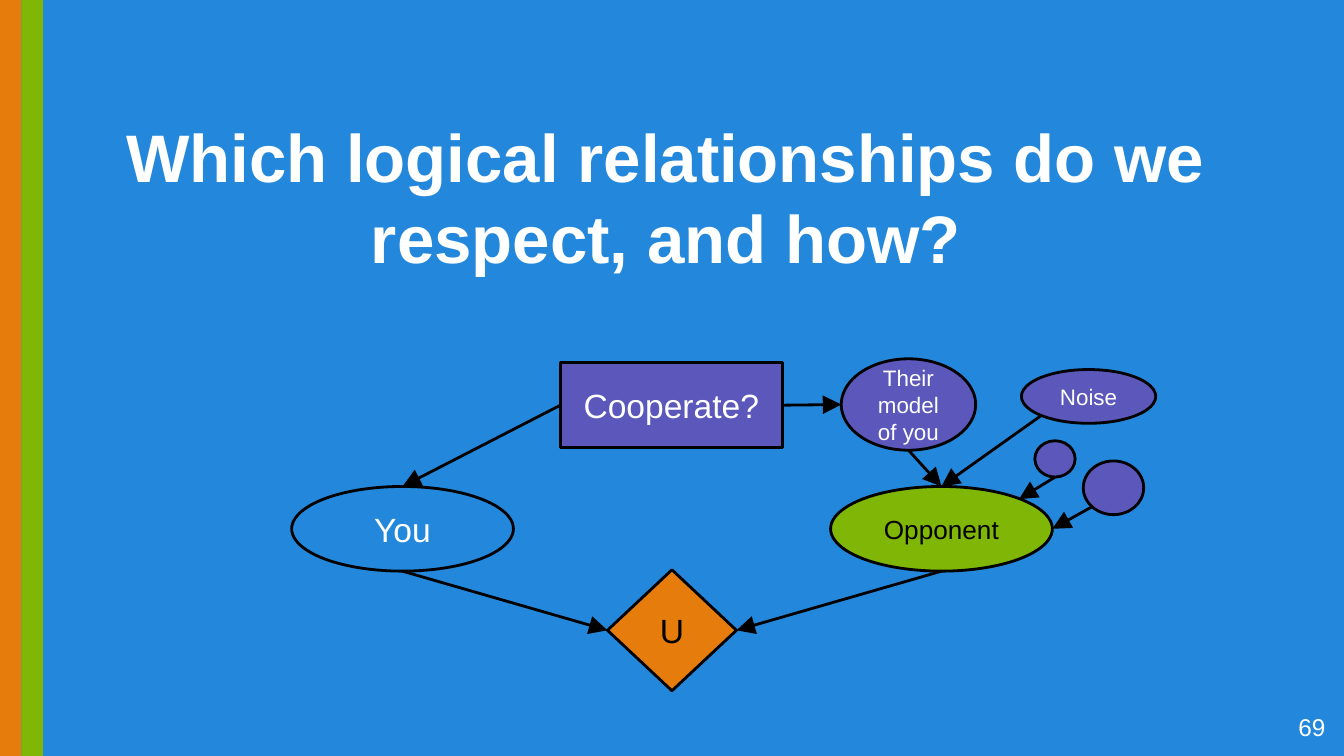
"""Build a slide with a decision diagram of logical relationships."""
from pptx import Presentation
from pptx.dml.color import RGBColor
from pptx.enum.shapes import MSO_CONNECTOR as Link, MSO_SHAPE as Kind
from pptx.enum.text import MSO_ANCHOR as Anchor, MSO_AUTO_SIZE as Fit, PP_ALIGN as Align
from pptx.oxml.ns import qn
from pptx.util import Inches, Pt

BLUE = RGBColor(0x23, 0x88, 0xDB)
GREEN = RGBColor(0x80, 0xB6, 0x06)
ORANGE = RGBColor(0xE6, 0x7C, 0x0B)
PURPLE = RGBColor(0x5B, 0x57, 0xBB)
WHITE = RGBColor(0xFF, 0xFF, 0xFF)
BLACK = RGBColor(0, 0, 0)

WIDE, BAR = 10, 0.16
HIGH = WIDE * 9 / 16
TITLE = "Which logical relationships do we respect, and how?"
NUMBER = "69"
BARS = [ORANGE, GREEN]

NODES = {
    "opponent": (Kind.OVAL, (6.18, 3.62, 1.65, 0.63), GREEN, "Opponent", 14, BLACK),
    "utility": (Kind.DIAMOND, (4.52, 4.24, 0.96, 0.9), ORANGE, "U", 18, BLACK),
    "choice": (Kind.RECTANGLE, (4.17, 2.7, 1.65, 0.63), PURPLE, "Cooperate?", 18, WHITE),
    "you": (Kind.OVAL, (2.17, 3.62, 1.65, 0.63), BLUE, "You", 18, WHITE),
    "model": (Kind.OVAL, (6.26, 2.67, 1, 0.68), PURPLE, "Their model of you", 12, WHITE),
    "noise": (Kind.OVAL, (7.6, 2.75, 1, 0.4), PURPLE, "Noise", 12, WHITE),
    "small": (Kind.OVAL, (7.7, 3.28, 0.3, 0.27), PURPLE, "", 12, WHITE),
    "large": (Kind.OVAL, (8.06, 3.43, 0.45, 0.4), PURPLE, "", 12, WHITE),
}

SIDES = {
    "top": (0.5, 0), "bottom": (0.5, 1), "left": (0, 0.5), "right": (1, 0.5),
    "lower left": (0.15, 0.85), "upper right": (0.85, 0.15),
}

ARROWS = [
    ("you", "bottom", "utility", "left"),
    ("opponent", "bottom", "utility", "right"),
    ("choice", "left", "you", "top"),
    ("choice", "right", "model", "left"),
    ("model", "bottom", "opponent", "top"),
    ("small", "bottom", "opponent", "upper right"),
    ("noise", "lower left", "opponent", "top"),
    ("large", "lower left", "opponent", "right"),
]


def write(shape, text, size, color, align=Align.CENTER, anchor=Anchor.MIDDLE):
    frame = shape.text_frame
    frame.text = text
    frame.word_wrap = True
    frame.auto_size = Fit.NONE
    frame.vertical_anchor = anchor
    frame.margin_left = frame.margin_right = Inches(0.1)
    frame.margin_top = frame.margin_bottom = Inches(0.1)
    para = frame.paragraphs[0]
    para.alignment = align
    para.font.name = "Arial"
    para.font.size = Pt(size)
    para.font.color.rgb = color
    return para


def draw(slide, kind, box, fill):
    shape = slide.shapes.add_shape(kind, *map(Inches, box))
    shape.shadow.inherit = False
    shape.fill.solid()
    shape.fill.fore_color.rgb = fill
    shape.line.fill.background()
    return shape


def outline(line):
    line.color.rgb = BLACK
    line.width = Pt(1.5)


def spot(name, side):
    left, top, width, height = NODES[name][1]
    across, down = SIDES[side]
    return Inches(left + width * across), Inches(top + height * down)


def point(slide, start, out, end, into):
    arrow = slide.shapes.add_connector(Link.STRAIGHT, *spot(start, out), *spot(end, into))
    outline(arrow.line)
    props = arrow.element.spPr
    line = props.find(qn("a:ln"))
    head = {"type": "triangle", "w": "lg", "len": "lg"}
    line.append(line.makeelement(qn("a:tailEnd"), head))
    props.append(props.makeelement(qn("a:effectLst"), {}))


def main():
    deck = Presentation()
    deck.slide_width, deck.slide_height = Inches(WIDE), Inches(HIGH)
    slide = deck.slides.add_slide(deck.slide_layouts[0])
    slide.background.fill.solid()
    slide.background.fill.fore_color.rgb = BLUE
    extra = slide.placeholders[1].element
    extra.getparent().remove(extra)

    title = slide.shapes.title
    title.left, title.top, title.width, title.height = map(Inches, (0.79, 0.16, 8.33, 5.29))
    para = write(title, TITLE, 36, WHITE, anchor=Anchor.TOP)
    para.font.bold = True
    para.line_spacing = 1.0
    title.text_frame.margin_top = Inches(0.7)

    for i, color in enumerate(BARS):
        draw(slide, Kind.RECTANGLE, (i * BAR, 0, BAR, HIGH), color)
    for kind, box, fill, text, size, color in NODES.values():
        node = draw(slide, kind, box, fill)
        outline(node.line)
        if text:
            write(node, text, size, color)
    for arrow in ARROWS:
        point(slide, *arrow)

    number = slide.shapes.add_textbox(*map(Inches, (9.36, 5.19, 0.6, 0.43)))
    write(number, NUMBER, 13, WHITE, Align.RIGHT)
    deck.save("out.pptx")


if __name__ == "__main__":
    main()
